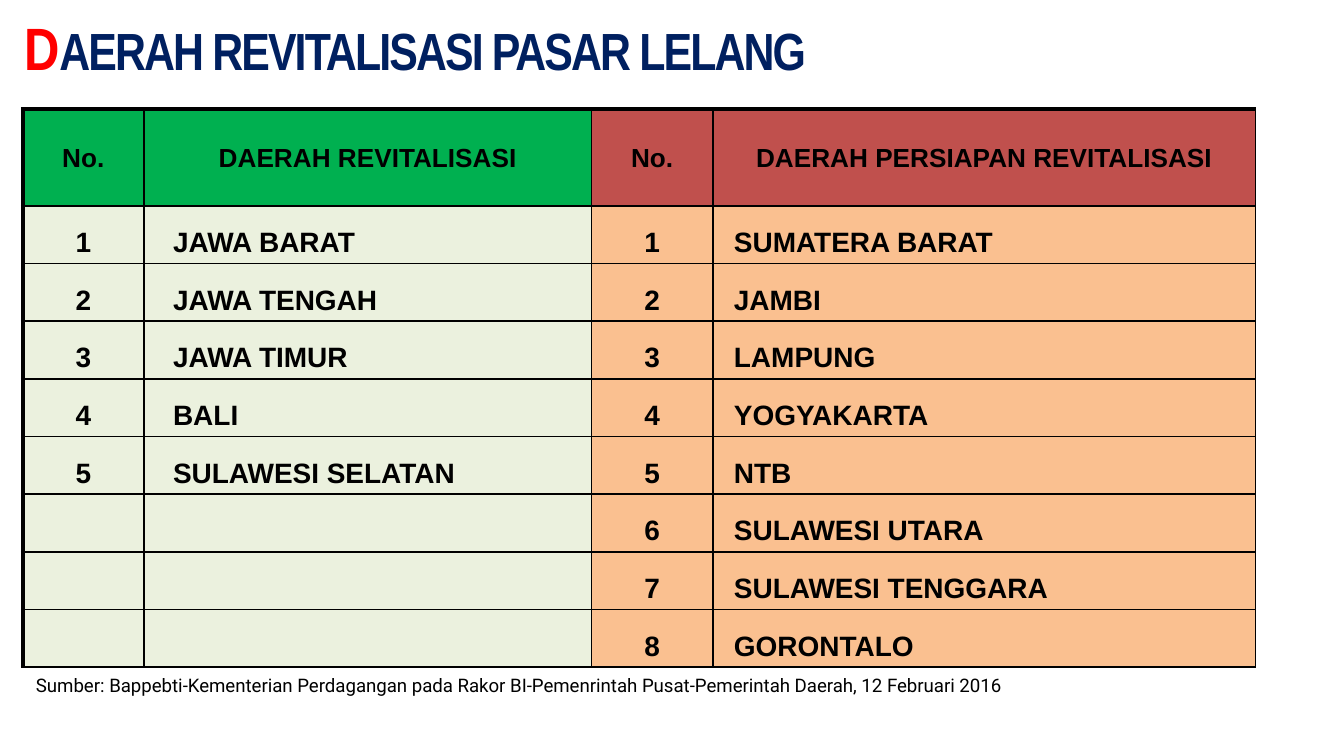
"""Build the slide listing the regions of the auction market revitalisation."""
import dataclasses
import typing

import lxml.etree
import pptx
import pptx.dml.color
import pptx.enum.text
import pptx.oxml.ns
import pptx.util

Cm, Pt = pptx.util.Cm, pptx.util.Pt
ALIGN, ANCHOR = pptx.enum.text.PP_ALIGN, pptx.enum.text.MSO_ANCHOR
AUTO = pptx.enum.text.MSO_AUTO_SIZE
COLORS = {
    "black": "000000", "red": "FF0000", "navy": "002060",
    "green": "00B050", "brick": "C0504D", "mint": "EBF1DE", "peach": "FAC090",
}
HEADER_HEIGHT, ROW_HEIGHT = 1.83, 1.09
COLUMN_WIDTHS = (2.29, 8.46, 2.29, 10.26)


@dataclasses.dataclass(frozen=True)
class RegionGroup:
    number_heading: str
    heading: str
    regions: tuple[str, ...]
    header_fill: str
    body_fill: str
    indent: float


@dataclasses.dataclass(frozen=True)
class CellStyle:
    fill: str
    size: float
    align: typing.Any
    anchor: typing.Any
    margin_left: float = 0.25
    space_after: float = 0


GROUPS = (
    RegionGroup("No.", "DAERAH REVITALISASI",
                ("JAWA BARAT", "JAWA TENGAH", "JAWA TIMUR", "BALI", "SULAWESI SELATAN"),
                "green", "mint", 0.55),
    RegionGroup("No.", "DAERAH PERSIAPAN REVITALISASI",
                ("SUMATERA BARAT", "JAMBI", "LAMPUNG", "YOGYAKARTA", "NTB",
                 "SULAWESI UTARA", "SULAWESI TENGGARA", "GORONTALO"),
                "brick", "peach", 0.4),
)


def set_attrs(obj: typing.Any, values: dict[str, typing.Any]) -> None:
    for name, value in values.items():
        setattr(obj, name, value)


def rgb(color: str) -> pptx.dml.color.RGBColor:
    return pptx.dml.color.RGBColor.from_string(COLORS[color])


def add_run(p: typing.Any, text: str, font: str, size: float, color: str,
            bold: bool = True) -> typing.Any:
    r = p.add_run()
    r.text = text
    set_attrs(r.font, {"name": font, "size": Pt(size), "bold": bold})
    r.font.color.rgb = rgb(color)
    return r


def set_borders(cell: typing.Any, widths: dict[str, float]) -> None:
    qn = pptx.oxml.ns.qn
    tc_pr = cell._tc.get_or_add_tcPr()
    for side, width in widths.items():
        ln = lxml.etree.SubElement(tc_pr, qn(f"a:ln{side}"), w=str(int(Pt(width))))
        fill = lxml.etree.SubElement(ln, qn("a:solidFill"))
        lxml.etree.SubElement(fill, qn("a:srgbClr"), val=COLORS["black"])


def fill_cell(cell: typing.Any, text: str, style: CellStyle) -> None:
    set_attrs(cell, {
        "vertical_anchor": style.anchor, "margin_left": Cm(style.margin_left),
        "margin_right": Cm(0.25), "margin_top": Cm(0.1), "margin_bottom": Cm(0.1),
    })
    cell.fill.solid()
    cell.fill.fore_color.rgb = rgb(style.fill)
    if text:
        p = cell.text_frame.paragraphs[0]
        set_attrs(p, {"alignment": style.align, "line_spacing": 1.1,
                      "space_before": Pt(6), "space_after": Pt(style.space_after)})
        add_run(p, text, "Arial", style.size, "black")


def add_title(s: typing.Any) -> None:
    sp = s.shapes.title
    set_attrs(sp, {"left": Cm(0.2), "top": Cm(-0.05), "width": Cm(19.89), "height": Cm(1.88)})
    tf = sp.text_frame
    set_attrs(tf, {"vertical_anchor": ANCHOR.MIDDLE, "auto_size": AUTO.NONE, "word_wrap": True})
    p = tf.paragraphs[0]
    p.alignment = ALIGN.LEFT
    for text, size, color in (("D", 32, "red"), ("AERAH REVITALISASI PASAR LELANG", 28, "navy")):
        r = add_run(p, text, "Arial Narrow", size, color)
        r.font._element.set("spc", "-100")


def add_region_table(s: typing.Any) -> None:
    count = max(len(group.regions) for group in GROUPS)
    table = s.shapes.add_table(
        count + 1, len(COLUMN_WIDTHS), Cm(0.43), Cm(2.06), Cm(sum(COLUMN_WIDTHS)),
        Cm(HEADER_HEIGHT + count * ROW_HEIGHT)).table
    set_attrs(table, {"first_row": False, "horz_banding": False})
    for column, width in zip(table.columns, COLUMN_WIDTHS):
        column.width = Cm(width)
    for i, row in enumerate(table.rows):
        row.height = Cm(ROW_HEIGHT if i else HEADER_HEIGHT)
        for j, cell in enumerate(row.cells):
            set_borders(cell, {"L": 1 if j else 2.25, "R": 1, "T": 1 if i else 2.25, "B": 1})
    for g, group in enumerate(GROUPS):
        header = CellStyle(group.header_fill, 14, ALIGN.CENTER, ANCHOR.MIDDLE, space_after=6)
        number = CellStyle(group.body_fill, 15, ALIGN.CENTER, ANCHOR.BOTTOM)
        region = CellStyle(group.body_fill, 15, ALIGN.LEFT, ANCHOR.BOTTOM, group.indent)
        fill_cell(table.cell(0, 2 * g), group.number_heading, header)
        fill_cell(table.cell(0, 2 * g + 1), group.heading, header)
        for i in range(count):
            name = group.regions[i] if i < len(group.regions) else ""
            fill_cell(table.cell(i + 1, 2 * g), str(i + 1) if name else "", number)
            fill_cell(table.cell(i + 1, 2 * g + 1), name, region)


def add_source(s: typing.Any) -> None:
    sp = s.shapes.add_textbox(Cm(0.43), Cm(12.62), Cm(25.48), Cm(0.69))
    tf = sp.text_frame
    set_attrs(tf, {"word_wrap": True, "auto_size": AUTO.SHAPE_TO_FIT_TEXT})
    add_run(tf.paragraphs[0],
            "Sumber: Bappebti-Kementerian Perdagangan pada Rakor BI-Pemenrintah "
            "Pusat-Pemerintah Daerah, 12 Februari 2016", "Roboto", 10, "black", False)


def main() -> None:
    prs = pptx.Presentation()
    set_attrs(prs, {"slide_width": Cm(25.4), "slide_height": Cm(14.29)})
    s = prs.slides.add_slide(prs.slide_layouts[5])
    add_title(s)
    add_region_table(s)
    add_source(s)
    prs.save("out.pptx")


if __name__ == "__main__":
    main()
